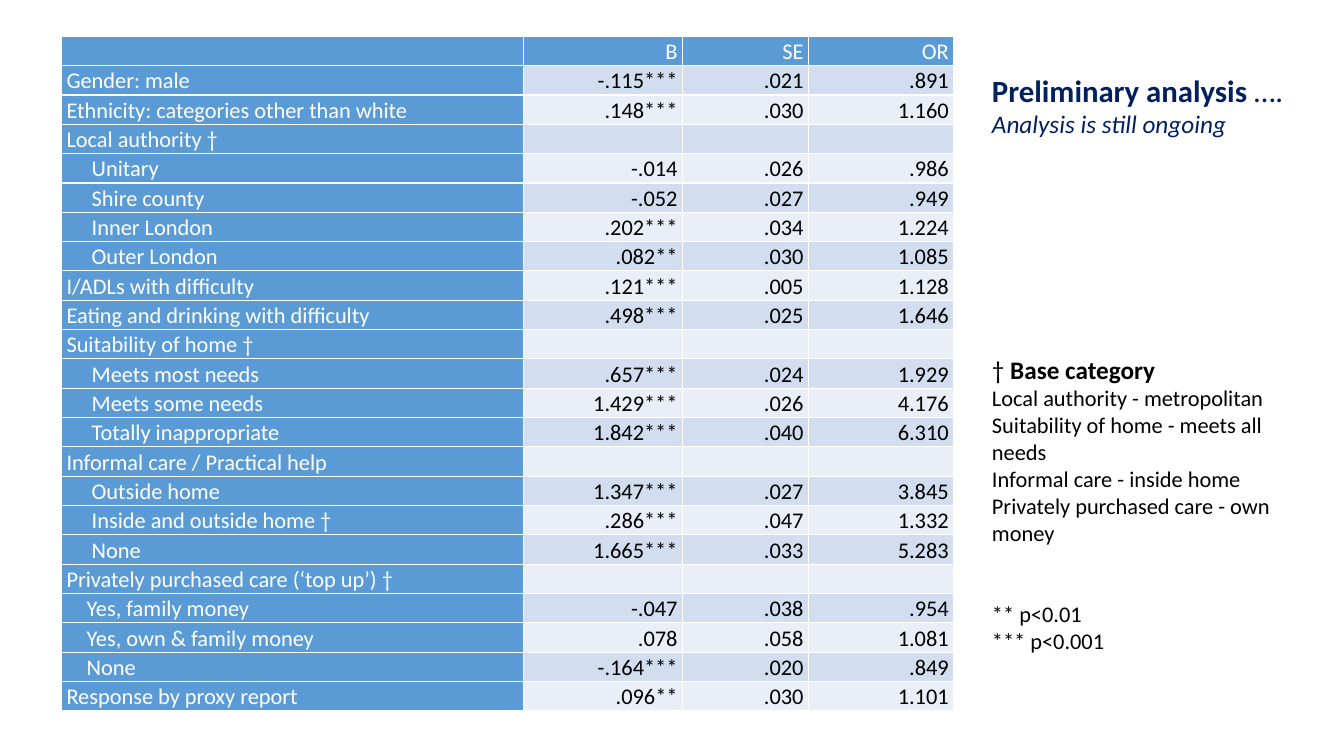
from dataclasses import dataclass

from lxml.etree import SubElement
from pptx import Presentation
from pptx.dml.color import RGBColor
from pptx.enum.text import MSO_ANCHOR, PP_ALIGN
from pptx.oxml.ns import qn
from pptx.util import Inches, Pt


@dataclass(frozen=True)
class Theme:
    font: str = "Calibri"
    header_fill: str = "5B9BD5"
    band_fills: tuple = ("EAEFF7", "D2DEEF")
    light_text: str = "FFFFFF"
    dark_text: str = "000000"
    title_text: str = "002060"
    title_size: int = 22
    heading_size: int = 18
    body_size: int = 16


THEME = Theme()

COLUMN_WIDTHS = (4.58, 1.58, 1.25, 1.44)
ROW_HEIGHT = 0.29
CELL_MARGIN = 0.05
LINE_SPACING = 1.07

# Label, indent in inches, then B, SE and OR
ROWS = [
    ("", 0, "B", "SE", "OR"),
    ("Gender: male", 0, "-.115***", ".021", ".891"),
    ("Ethnicity: categories other than white", 0, ".148***", ".030", "1.160"),
    ("Local authority †", 0, "", "", ""),
    ("Unitary", 0.25, "-.014", ".026", ".986"),
    ("Shire county", 0.25, "-.052", ".027", ".949"),
    ("Inner London", 0.25, ".202***", ".034", "1.224"),
    ("Outer London", 0.25, ".082**", ".030", "1.085"),
    ("I/ADLs with difficulty", 0, ".121***", ".005", "1.128"),
    ("Eating and drinking with difficulty", 0, ".498***", ".025", "1.646"),
    ("Suitability of home †", 0, "", "", ""),
    ("Meets most needs", 0.25, ".657***", ".024", "1.929"),
    ("Meets some needs", 0.25, "1.429***", ".026", "4.176"),
    ("Totally inappropriate", 0.25, "1.842***", ".040", "6.310"),
    ("Informal care / Practical help", 0, "", "", ""),
    ("Outside home", 0.25, "1.347***", ".027", "3.845"),
    ("Inside and outside home †", 0.25, ".286***", ".047", "1.332"),
    ("None", 0.25, "1.665***", ".033", "5.283"),
    ("Privately purchased care (‘top up’) †", 0, "", "", ""),
    ("Yes, family money", 0.2, "-.047", ".038", ".954"),
    ("Yes, own & family money", 0.2, ".078", ".058", "1.081"),
    ("None", 0.2, "-.164***", ".020", ".849"),
    ("Response by proxy report", 0, ".096**", ".030", "1.101"),
]


def add_text(paragraph, text, *, size=THEME.body_size, color=THEME.dark_text,
             bold=False, italic=False):
    run = paragraph.add_run()
    run.text = text
    run.font.name = THEME.font
    run.font.size = Pt(size)
    run.font.bold = bold
    run.font.italic = italic
    run.font.color.rgb = RGBColor.from_string(color)


def fill_cell(cell, text, *, fill, color, align, indent=0):
    cell.fill.solid()
    cell.fill.fore_color.rgb = RGBColor.from_string(fill)
    cell.vertical_anchor = MSO_ANCHOR.MIDDLE
    cell.margin_left = Inches(CELL_MARGIN + indent)
    cell.margin_right = Inches(CELL_MARGIN)
    cell.margin_top = cell.margin_bottom = 0
    paragraph = cell.text_frame.paragraphs[0]
    paragraph.alignment = align
    paragraph.line_spacing = LINE_SPACING
    if text:
        add_text(paragraph, text, color=color)
    else:
        # An empty cell still needs the body size to keep its row low
        SubElement(paragraph._p, qn("a:endParaRPr"), sz=str(THEME.body_size * 100))


def add_regression_table(slide):
    frame = slide.shapes.add_table(
        len(ROWS), len(COLUMN_WIDTHS), Inches(0.61), Inches(0.36),
        Inches(sum(COLUMN_WIDTHS)), Inches(ROW_HEIGHT * len(ROWS)))
    table = frame.table
    table.first_col = True
    for column, width in zip(table.columns, COLUMN_WIDTHS):
        column.width = Inches(width)
    for row_index, (label, indent, *values) in enumerate(ROWS):
        table.rows[row_index].height = Inches(ROW_HEIGHT)
        fill_cell(table.cell(row_index, 0), label, fill=THEME.header_fill,
                  color=THEME.light_text, align=PP_ALIGN.LEFT, indent=indent)
        is_header = row_index == 0
        fill = THEME.header_fill if is_header else THEME.band_fills[row_index % 2]
        color = THEME.light_text if is_header else THEME.dark_text
        for column_index, value in enumerate(values, start=1):
            fill_cell(table.cell(row_index, column_index), value, fill=fill,
                      color=color, align=PP_ALIGN.RIGHT)


def add_notes_column(slide):
    box = slide.shapes.add_textbox(Inches(9.74), Inches(0.66), Inches(3.19), Inches(6.19))
    text_frame = box.text_frame
    text_frame.word_wrap = True

    # Title and status
    title = text_frame.paragraphs[0]
    add_text(title, "Preliminary analysis ", size=THEME.title_size,
             color=THEME.title_text, bold=True)
    add_text(title, "….", size=THEME.title_size, color=THEME.title_text)
    add_text(text_frame.add_paragraph(), "Analysis is still ongoing",
             size=THEME.heading_size, color=THEME.title_text, italic=True)

    # Base categories
    heading = text_frame.add_paragraph()
    heading.space_before = Pt(154)
    add_text(heading, "† ", size=THEME.heading_size)
    add_text(heading, "Base category", size=THEME.heading_size, bold=True)

    # Details and significance levels
    for text, gap in (
        ("Local authority - metropolitan Suitability of home - meets all needs", 0),
        ("Informal care - inside home", 0),
        ("Privately purchased care - own money", 0),
        ("** p<0.01", 39),
        ("*** p<0.001", 0),
    ):
        paragraph = text_frame.add_paragraph()
        paragraph.space_before = Pt(gap)
        add_text(paragraph, text)


def main():
    presentation = Presentation()
    presentation.slide_width = Inches(13.33)
    presentation.slide_height = Inches(7.5)
    slide = presentation.slides.add_slide(presentation.slide_layouts[6])
    add_regression_table(slide)
    add_notes_column(slide)
    presentation.save("out.pptx")


if __name__ == "__main__":
    main()
